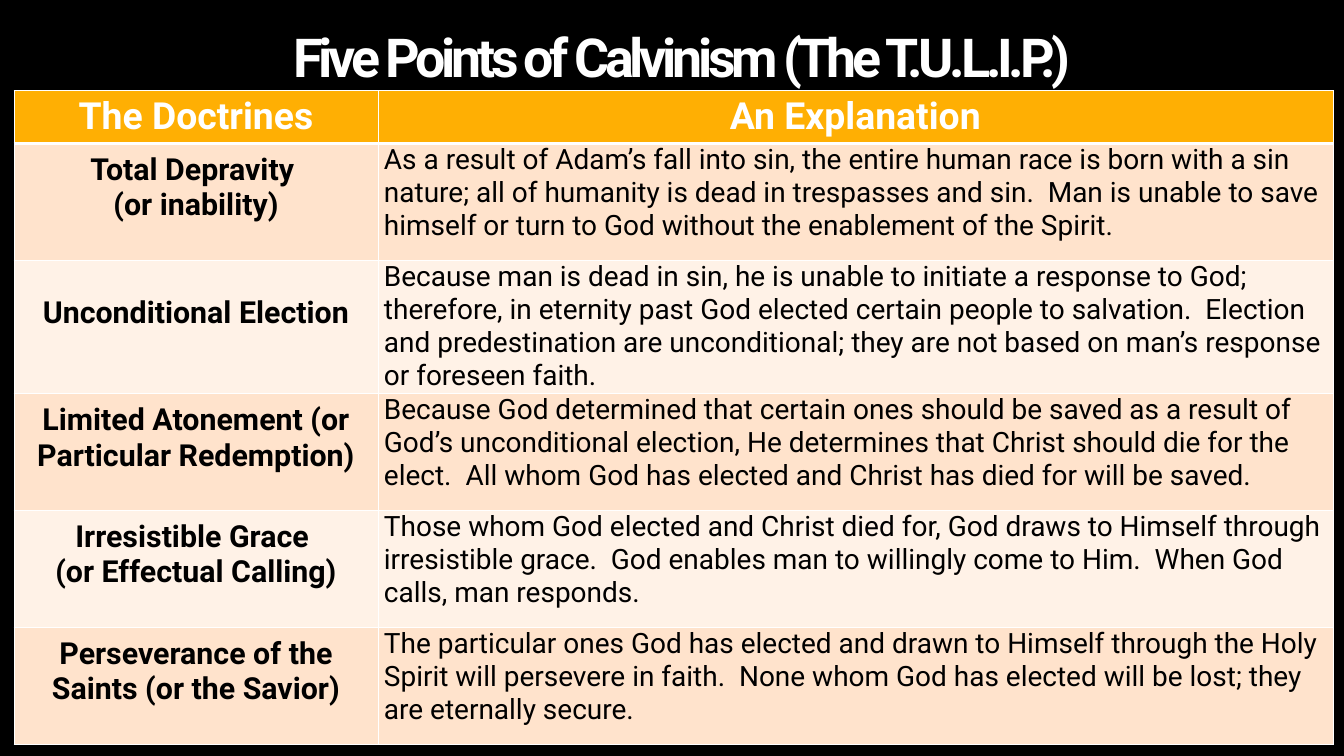
from dataclasses import dataclass

from lxml.etree import SubElement
from pptx import Presentation
from pptx.dml.color import RGBColor
from pptx.enum.text import MSO_ANCHOR as Anchor, MSO_AUTO_SIZE as AutoSize, PP_ALIGN as Align
from pptx.oxml.ns import qn
from pptx.util import Cm, Pt

BLACK = RGBColor(0x00, 0x00, 0x00)
WHITE = RGBColor(0xFF, 0xFF, 0xFF)
AMBER = RGBColor(0xFF, 0xAF, 0x03)
PEACH = RGBColor(0xFF, 0xE3, 0xCC)
CREAM = RGBColor(0xFF, 0xF2, 0xE7)
FONT = "Roboto"


@dataclass(frozen=True)
class Doctrine:
    name: tuple[str, ...]
    explanation: str
    height: float = 3.53


@dataclass(frozen=True)
class CellStyle:
    size: int
    color: RGBColor
    bold: bool
    align: Align
    anchor: Anchor
    margins: tuple[float, float, float, float]
    bottom_line: int = 1


HEADER = CellStyle(32, WHITE, True, Align.CENTER, Anchor.MIDDLE, (0.25, 0.13, 0.25, 0.13), 3)
NAME = CellStyle(26, BLACK, True, Align.CENTER, Anchor.MIDDLE, (0.25, 0.13, 0.25, 0.99))
EXPLANATION = CellStyle(24, BLACK, False, Align.LEFT, Anchor.TOP, (0.18, 0, 0.18, 0))

DOCTRINES = [
    Doctrine(
        ("Total Depravity ", "(or inability)"),
        "As a result of Adam’s fall into sin, the entire human race is born with a sin nature; "
        "all of humanity is dead in trespasses and sin.  Man is unable to save himself or turn "
        "to God without the enablement of the Spirit.",
    ),
    Doctrine(
        ("Unconditional Election",),
        "Because man is dead in sin, he is unable to initiate a response to God; therefore, in "
        "eternity past God elected certain people to salvation.  Election and predestination are "
        "unconditional; they are not based on man’s response or foreseen faith.",
        4.04,
    ),
    Doctrine(
        ("Limited Atonement (or Particular Redemption)",),
        "Because God determined that certain ones should be saved as a result of God’s "
        "unconditional election, He determines that Christ should die for the elect.  All whom "
        "God has elected and Christ has died for will be saved.",
    ),
    Doctrine(
        ("Irresistible Grace ", "(or Effectual Calling)"),
        "Those whom God elected and Christ died for, God draws to Himself through irresistible "
        "grace.  God enables man to willingly come to Him.  When God calls, man responds.",
    ),
    Doctrine(
        ("Perseverance of the Saints (or the Savior)",),
        "The particular ones God has elected and drawn to Himself through the Holy Spirit will "
        "persevere in faith.  None whom God has elected will be lost; they are eternally secure.",
    ),
]


def add_lines(para, lines: tuple[str, ...], size: int, color: RGBColor, bold: bool) -> None:
    for index, line in enumerate(lines):
        if index:
            para.add_line_break()
        run = para.add_run()
        run.text = line
        run.font.name = FONT
        run.font.size = Pt(size)
        run.font.bold = bold
        run.font.color.rgb = color


def add_borders(cell, bottom_line: int) -> None:
    properties = cell._tc.get_or_add_tcPr()
    for side, width in (("L", 1), ("R", 1), ("T", 1), ("B", bottom_line)):
        line = SubElement(properties, qn(f"a:ln{side}"), w=str(Pt(width)))
        fill = SubElement(line, qn("a:solidFill"))
        SubElement(fill, qn("a:srgbClr"), val=str(WHITE))


def fill_cell(cell, lines: tuple[str, ...], style: CellStyle, background: RGBColor) -> None:
    add_borders(cell, style.bottom_line)
    cell.fill.solid()
    cell.fill.fore_color.rgb = background
    cell.vertical_anchor = style.anchor
    left, top, right, bottom = style.margins
    cell.margin_left, cell.margin_top = Cm(left), Cm(top)
    cell.margin_right, cell.margin_bottom = Cm(right), Cm(bottom)
    para = cell.text_frame.paragraphs[0]
    para.alignment = style.align
    add_lines(para, lines, style.size, style.color, style.bold)


def add_title(page) -> None:
    title = page.shapes.title
    title.left, title.top, title.width, title.height = Cm(3.35), Cm(0.43), Cm(34.54), Cm(2.54)
    frame = title.text_frame
    frame.word_wrap = True
    frame.auto_size = AutoSize.NONE
    frame.vertical_anchor = Anchor.MIDDLE
    frame.margin_left = frame.margin_right = Cm(0.36)
    frame.margin_top = frame.margin_bottom = Cm(0.18)
    para = frame.paragraphs[0]
    para.alignment = Align.CENTER
    para.space_after = Pt(6)
    properties = para._p.get_or_add_pPr()
    properties.set("marL", str(Cm(2.39)))
    properties.set("indent", str(-Cm(2.39)))
    add_lines(para, ("Five Points of Calvinism (The T.U.L.I.P.)",), 46, WHITE, True)
    para.runs[0].font._element.set("spc", "-360")


def add_doctrines(page) -> None:
    heights = [1.6] + [doctrine.height for doctrine in DOCTRINES]
    widths = [11, 28.88]
    table = page.shapes.add_table(
        len(heights), len(widths), Cm(0.43), Cm(2.74), Cm(sum(widths)), Cm(sum(heights))
    ).table
    for column, width in zip(table.columns, widths):
        column.width = Cm(width)
    for row, height in zip(table.rows, heights):
        row.height = Cm(height)
    for index, heading in enumerate(("The Doctrines", "An Explanation")):
        fill_cell(table.cell(0, index), (heading,), HEADER, AMBER)
    for index, doctrine in enumerate(DOCTRINES, start=1):
        background = PEACH if index % 2 else CREAM
        fill_cell(table.cell(index, 0), doctrine.name, NAME, background)
        fill_cell(table.cell(index, 1), (doctrine.explanation,), EXPLANATION, background)


def main() -> None:
    deck = Presentation()
    deck.slide_width, deck.slide_height = Cm(40.64), Cm(22.86)
    page = deck.slides.add_slide(deck.slide_layouts[5])
    page.background.fill.solid()
    page.background.fill.fore_color.rgb = BLACK
    add_title(page)
    add_doctrines(page)
    deck.save("out.pptx")


if __name__ == "__main__":
    main()
